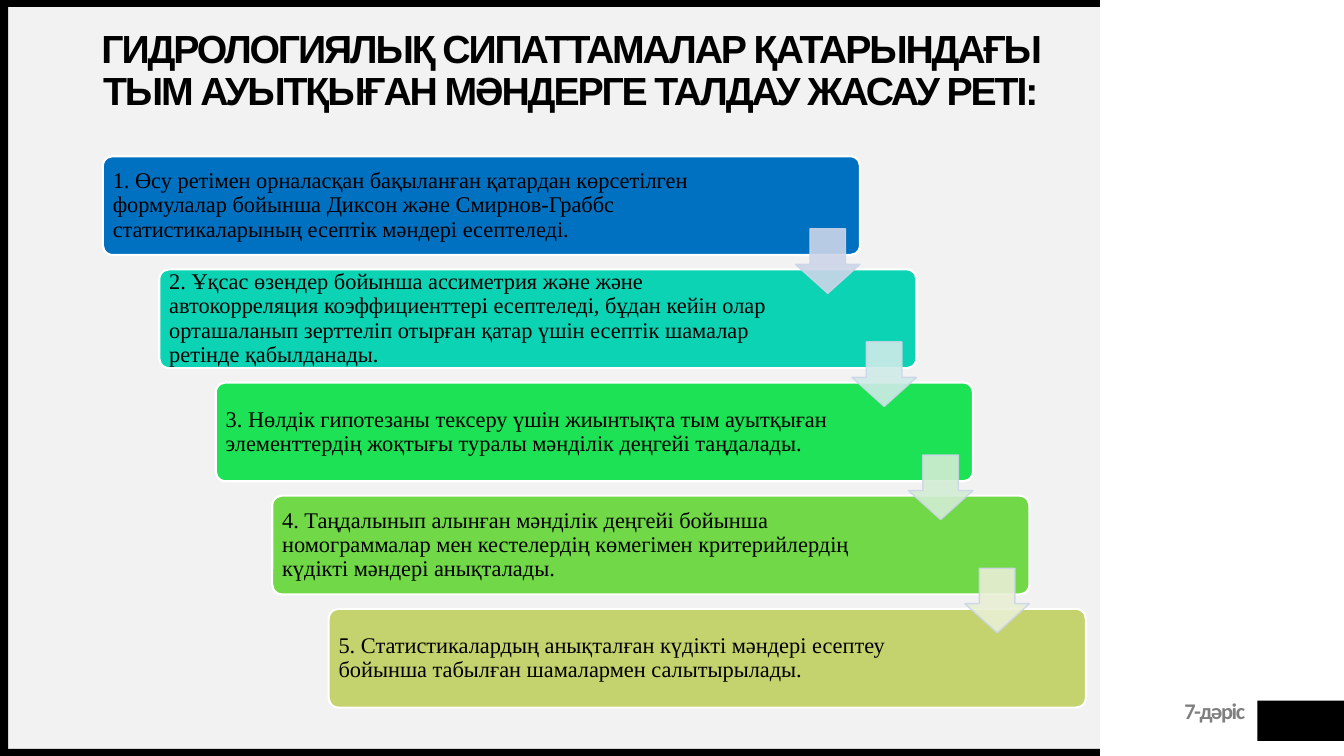
from lxml.etree import SubElement
from pptx import Presentation
from pptx.dml.color import RGBColor
from pptx.enum.shapes import MSO_SHAPE
from pptx.enum.text import MSO_ANCHOR, MSO_AUTO_SIZE, PP_ALIGN
from pptx.oxml.ns import qn
from pptx.util import Inches, Pt

COLORS = {"panel": "F2F2F2", "black": "000000", "white": "FFFFFF",
          "footer": "808080", "arrow_line": "CCD5E8"}

TITLE = ("ГИДРОЛОГИЯЛЫҚ СИПАТТАМАЛАР ҚАТАРЫНДАҒЫ ТЫМ АУЫТҚЫҒАН "
         "МӘНДЕРГЕ ТАЛДАУ ЖАСАУ РЕТІ:")

STEPS = [
    ("0070C0", "CCD5E8", "1. Өсу ретімен орналасқан бақыланған қатардан көрсетілген "
     "формулалар бойынша Диксон және Смирнов-Граббс статистикаларының "
     "есептік мәндері есептеледі."),
    ("0DD3B5", "CFEBE7", "2. Ұқсас өзендер бойынша ассиметрия және және автокорреляция "
     "коэффициенттері есептеледі, бұдан кейін олар орташаланып зерттеліп "
     "отырған қатар үшін есептік шамалар ретінде қабылданады."),
    ("1EE255", "D2EDD3", "3. Нөлдік гипотезаны тексеру үшін жиынтықта тым ауытқыған "
     "элементтердің жоқтығы туралы мәнділік деңгейі таңдалады."),
    ("71D848", "E9EFD5", "4. Таңдалынып алынған мәнділік деңгейі бойынша номограммалар "
     "мен кестелердің көмегімен критерийлердің күдікті мәндері анықталады."),
    ("C4D36D", None, "5. Статистикалардың анықталған күдікті мәндері есептеу бойынша "
     "табылған шамалармен салытырылады."),
]


def add_block(page, kind, box, fill, line=None, line_width=1):
    shape = page.shapes.add_shape(kind, *map(Inches, box))
    shape.shadow.inherit = False
    shape.fill.solid()
    shape.fill.fore_color.rgb = RGBColor.from_string(fill)
    if line:
        shape.line.color.rgb = RGBColor.from_string(line)
        shape.line.width = Pt(line_width)
    else:
        shape.line.fill.background()
    return shape


def write_text(shape, text, font, size, color, align, spacing, insets,
               bold=False, tracking=0, anchor=MSO_ANCHOR.MIDDLE):
    frame = shape.text_frame
    frame.word_wrap = True
    frame.auto_size = MSO_AUTO_SIZE.NONE
    frame.vertical_anchor = anchor
    (frame.margin_left, frame.margin_top,
     frame.margin_right, frame.margin_bottom) = map(Inches, insets)
    para = frame.paragraphs[0]
    span = para.add_run()
    span.text = text
    para.alignment = align
    para.line_spacing = spacing
    para.space_before = Pt(0)
    para.font.name = font
    para.font.size = Pt(size)
    para.font.bold = bold
    para.font.color.rgb = RGBColor.from_string(color)
    if tracking:
        span.font._element.set("spc", str(int(tracking * 100)))


def make_translucent(shape, percent):
    for color in shape.element.spPr.iter(qn("a:srgbClr")):
        SubElement(color, qn("a:alpha")).set("val", str(percent * 1000))


def add_frame(page, box):
    left, top, width, height = box
    bar = 0.07
    add_block(page, MSO_SHAPE.RECTANGLE,
              (left + bar, top + bar, width - bar, height - 2 * bar), COLORS["panel"])
    for edge in ((left, top + height - bar, width, bar),
                 (left, top, width, bar),
                 (left, top, 0.08, height)):
        add_block(page, MSO_SHAPE.RECTANGLE, edge, COLORS["black"])


def add_footer(page, box):
    left, top, width, height = box
    block_width = 0.86
    add_block(page, MSO_SHAPE.RECTANGLE,
              (left + width - block_width, top, block_width, height), COLORS["black"])
    label = page.shapes.add_textbox(*map(Inches, (left, top, 1.82, 0.24)))
    write_text(label, "7-дәріс", "Calibri", 16, COLORS["footer"], PP_ALIGN.RIGHT,
               Pt(14), (0, 0.04, 0, 0), True, -1, MSO_ANCHOR.TOP)


def add_title(page, box):
    title = page.shapes.title
    page.shapes.element.append(title.element)
    title.left, title.top, title.width, title.height = map(Inches, box)
    write_text(title, TITLE, "Arial", 28, COLORS["black"], PP_ALIGN.CENTER,
               0.9, (0, 0, 0, 0), True, -1.5)


def add_staircase(page, box):
    left, top, width, height = box
    step_width, step_height, arrow_size = 7.51, 0.98, 0.64
    shift = (width - step_width) / (len(STEPS) - 1)
    drop = (height - step_height) / (len(STEPS) - 1)
    for index, (fill, _, text) in enumerate(STEPS):
        step = add_block(page, MSO_SHAPE.ROUNDED_RECTANGLE,
                         (left + index * shift, top + index * drop,
                          step_width, step_height), fill, COLORS["white"], 1.5)
        step.adjustments[0] = 0.1
        write_text(step, text, "Times New Roman", 16, COLORS["black"], PP_ALIGN.LEFT,
                   0.9, (0.07, 0.07, 1.25, 0.07))
    for index, (_, fill, _) in enumerate(STEPS[:-1]):
        arrow = add_block(page, MSO_SHAPE.DOWN_ARROW,
                          (left + index * shift + step_width - arrow_size,
                           top + index * drop + 0.72, arrow_size, arrow_size),
                          fill, COLORS["arrow_line"])
        arrow.adjustments[0] = 0.55
        arrow.adjustments[1] = 0.45
        make_translucent(arrow, 90)


def main():
    deck = Presentation()
    deck.slide_width, deck.slide_height = Inches(13.33), Inches(7.5)
    page = deck.slides.add_slide(deck.slide_layouts[5])
    add_frame(page, (0, 0, 10.91, 7.5))
    add_footer(page, (10.53, 6.95, 2.8, 0.4))
    add_title(page, (0.91, 0.25, 9.5, 0.92))
    add_staircase(page, (1.02, 1.55, 9.75, 5.47))
    deck.save("out.pptx")


if __name__ == "__main__":
    main()
